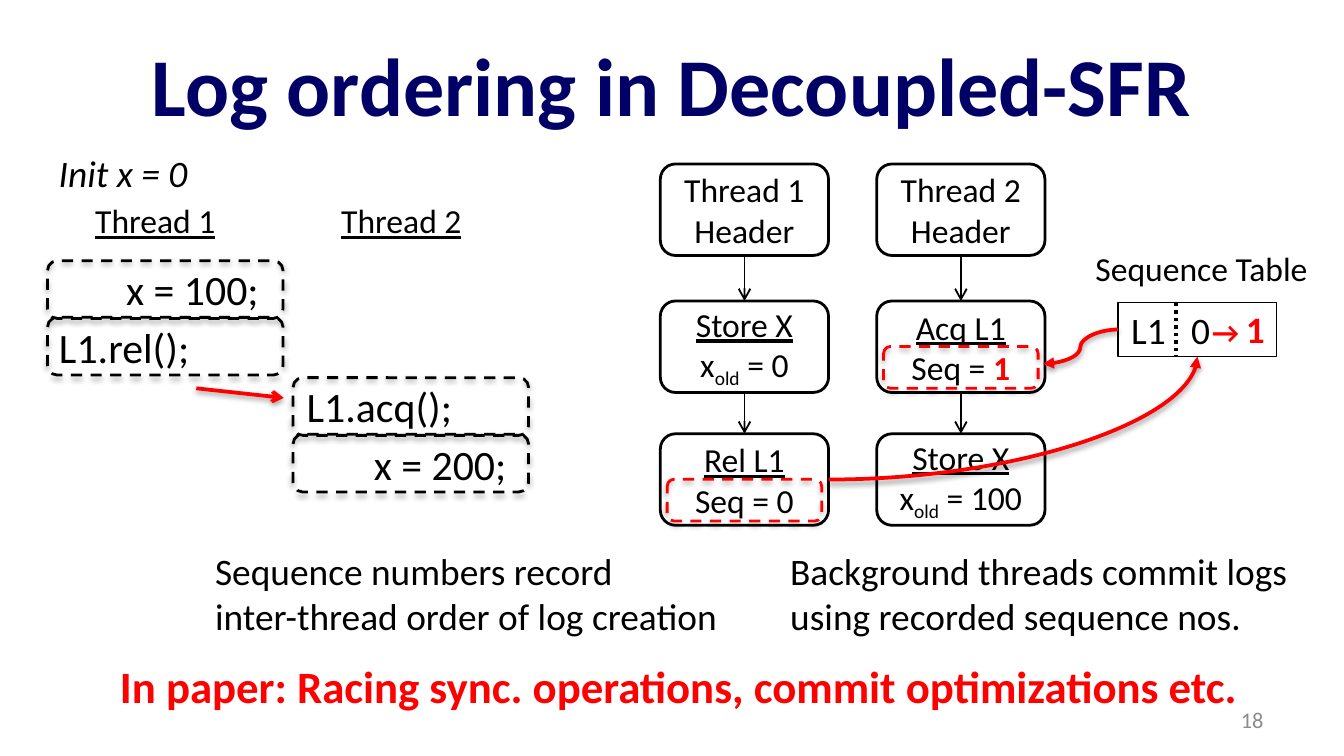
from dataclasses import dataclass

from lxml.etree import SubElement
from pptx import Presentation
from pptx.dml.color import RGBColor
from pptx.enum.dml import MSO_LINE
from pptx.enum.shapes import MSO_CONNECTOR as CONN, MSO_SHAPE as SHAPE
from pptx.enum.text import MSO_ANCHOR as ANCHOR, MSO_AUTO_SIZE as AUTO, PP_ALIGN as ALIGN
from pptx.oxml.ns import qn
from pptx.util import Cm, Pt


@dataclass(frozen=True)
class Theme:
    font: str = "Calibri"
    ink: str = "000000"
    accent: str = "FF0000"
    heading: str = "000066"
    muted: str = "8C8C8C"
    title: float = 44
    banner: float = 24
    code: float = 22.4
    body: float = 20
    label: float = 18
    arrow: float = 16
    small: float = 12


T = Theme()
COLUMNS = (12.48, 16.57)
ROWS = (3.1, 5.69, 8.2)
BOX_W, BOX_H = 3.18, 1.73


def style(r, size, color=T.ink, bold=False, italic=False, underline=False, sub=False):
    f = r.font
    f.name, f.size, f.color.rgb = T.font, Pt(size), RGBColor.from_string(color)
    f.bold, f.italic, f.underline = bold, italic, underline
    if sub:
        r._r.get_or_add_rPr().set("baseline", "-25000")


def write(tf, text, size, align=ALIGN.LEFT, anchor=ANCHOR.TOP, **look):
    tf.text = text
    tf.word_wrap, tf.auto_size, tf.vertical_anchor = True, AUTO.NONE, anchor
    for p in tf.paragraphs:
        p.alignment = align
        for r in p.runs:
            style(r, size, **look)


def add_run(p, text, size, **look):
    r = p.add_run()
    r.text = text
    style(r, size, **look)


def add_tab_stop(p, pos):
    tabs = SubElement(p._p.get_or_add_pPr(), qn("a:tabLst"))
    SubElement(tabs, qn("a:tab"), pos=str(Cm(pos)), algn="l")


def place(sp, x, y, w, h):
    sp.left, sp.top, sp.width, sp.height = Cm(x), Cm(y), Cm(w), Cm(h)


def add_label(s, box, text, size, **look):
    sp = s.shapes.add_textbox(*map(Cm, box))
    write(sp.text_frame, text, size, **look)
    return sp


def fill_body(sp, box, text, size):
    """Use a body placeholder as a list without bullets."""
    place(sp, *box)
    tf = sp.text_frame
    write(tf, text, size)
    for i, p in enumerate(tf.paragraphs):
        pPr = p._p.get_or_add_pPr()
        pPr.set("marL", "0")
        pPr.set("indent", "0")
        SubElement(pPr, qn("a:buNone"))
        add_tab_stop(p, 1.27)
        p.space_before = Pt(size * 0.2 if i else 0)


def add_shadow(effects, opacity, distance):
    shadow = SubElement(effects, qn("a:outerShdw"), blurRad=str(Pt(3.1)),
                        dist=str(Pt(distance)), dir="5400000", rotWithShape="0")
    color = SubElement(shadow, qn("a:srgbClr"), val=T.ink)
    SubElement(color, qn("a:alpha"), val=str(opacity * 1000))


def set_line(line, color, width, dash=None):
    line.color.rgb = RGBColor.from_string(color)
    line.width = Pt(width)
    if dash:
        line.dash_style = dash


def add_box(s, kind, x, y, w, h, width=1.5, color=T.ink, dash=None):
    sp = s.shapes.add_shape(kind, Cm(x), Cm(y), Cm(w), Cm(h))
    sp.shadow.inherit = False
    sp.fill.background()
    set_line(sp.line, color, width, dash)
    return sp


def add_dashed_frame(s, x, y, w, h, color=T.ink):
    sp = add_box(s, SHAPE.ROUNDED_RECTANGLE, x, y, w, h, color=color, dash=MSO_LINE.DASH)
    add_shadow(sp._element.spPr.find(qn("a:effectLst")), 35, 1.8)


def add_flow_box(s, col, row, head, detail, underline=True):
    """Draw a log entry; detail is a list of (text, look) runs for its second line."""
    sp = add_box(s, SHAPE.ROUNDED_RECTANGLE, COLUMNS[col], ROWS[row], BOX_W, BOX_H)
    tf = sp.text_frame
    write(tf, head, T.label, ALIGN.CENTER, ANCHOR.MIDDLE, underline=underline)
    p = tf.add_paragraph()
    p.alignment = ALIGN.CENTER
    for text, look in detail:
        add_run(p, text, T.label, **look)
    return sp


def add_line(s, start, end, color=T.ink, width=1, kind=CONN.STRAIGHT, head=None,
             dash=None, shadow=False):
    c = s.shapes.add_connector(kind, *map(Cm, start + end))
    set_line(c.line, color, width, dash)
    spPr = c._element.spPr
    if head:
        SubElement(spPr.find(qn("a:ln")), qn("a:tailEnd"), type=head)
    effects = SubElement(spPr, qn("a:effectLst"))
    if shadow:
        add_shadow(effects, 38, 1.6)
    return c


def add_program(s, bodies):
    add_label(s, (0.86, 2.72, 3.2, 1.12), "Init x = 0", T.body, italic=True)
    for x, name in ((1.55, "Thread 1"), (6.2, "Thread 2")):
        add_label(s, (x, 3.66, 2.87, 1.02), name, T.label, underline=True)
    fill_body(bodies[0], (0.86, 4.85, 4.5, 3.4), "\tx = 100;\nL1.rel();", T.code)
    fill_body(bodies[1], (5.54, 7.06, 4.55, 3.4), "L1.acq();\n\tx = 200;", T.code)
    for x, y in ((0.9, 4.93), (5.54, 7.14)):
        for i in range(2):
            add_dashed_frame(s, x, y + i * 1.07, 4.45, 1.09)
    add_line(s, (3.71, 7.34), (5.36, 7.52), T.accent, 2, head="arrow", shadow=True)


def add_logs(s):
    """Draw both log columns and return the release entry."""
    def old_x(value):
        return [("x", {}), ("old", {"sub": True}), (f" = {value}", {})]

    header = [("Header", {})]
    acquired = [("Seq = ", {}), ("1", {"color": T.accent, "bold": True})]
    logs = (
        (("Thread 1", header), ("Store X", old_x(0)), ("Rel L1", [("Seq = 0", {})])),
        (("Thread 2", header), ("Acq L1", acquired), ("Store X", old_x(100))),
    )
    columns = [[add_flow_box(s, col, row, *entry, underline=row > 0)
                for row, entry in enumerate(log)] for col, log in enumerate(logs)]
    for boxes in columns:
        for upper, lower in zip(boxes, boxes[1:]):
            c = add_line(s, (0, 0), (1, 1), head="arrow")
            c.begin_connect(upper, 2)
            c.end_connect(lower, 0)
    for col, row in ((0, 2), (1, 1)):
        add_dashed_frame(s, COLUMNS[col] + 0.13, ROWS[row] + 0.86, 2.92, 0.79, T.accent)
    return columns[0][2]


def add_sequence_table(s, release):
    add_label(s, (20.02, 4.57, 5.38, 1.02), "Sequence Table", T.label, align=ALIGN.CENTER)
    table = add_box(s, SHAPE.RECTANGLE, 21.13, 5.72, 3, 1.02, width=0.75)
    write(table.text_frame, "L1\t0", T.body, anchor=ANCHOR.MIDDLE)
    add_tab_stop(table.text_frame.paragraphs[0], 1.13)
    add_line(s, (22.23, 5.72), (22.23, 6.74), width=2, dash=MSO_LINE.ROUND_DOT)
    new = add_label(s, (22.66, 5.66, 1.96, 1.12), "→ ", T.arrow, color=T.accent, bold=True)
    add_run(new.text_frame.paragraphs[0], "1", T.body, color=T.accent, bold=True)

    look = dict(color=T.accent, width=2, kind=CONN.CURVE, head="triangle", shadow=True)
    update = add_line(s, (15.66, 9.07), (22.63, 6.74), **look)
    update._element.spPr.find(qn("a:prstGeom")).set("prst", "curvedConnector2")
    update.begin_connect(release, 3)
    update.end_connect(table, 2)
    lookup = add_line(s, (21.13, 6.23), (19.71, 6.88), **look)
    lookup.begin_connect(table, 1)


def main():
    prs = Presentation()
    prs.slide_width, prs.slide_height = Cm(25.4), Cm(14.29)
    s = prs.slides.add_slide(prs.slide_layouts[4])
    title, *bodies = s.placeholders
    place(title, 1.27, 0.38, 22.86, 2.39)
    write(title.text_frame, "Log ordering in Decoupled-SFR", T.title, ALIGN.CENTER,
          ANCHOR.MIDDLE, color=T.heading, bold=True)

    add_program(s, bodies[:2])
    release = add_logs(s)
    add_sequence_table(s, release)

    fill_body(bodies[2], (3.81, 10.24, 10.03, 1.91),
              "Sequence numbers record\vinter-thread order of log creation", T.body)
    fill_body(bodies[3], (14.68, 10.24, 10.24, 1.91),
              "Background threads commit logs using recorded sequence nos.", T.body)
    add_label(s, (1.04, 12.32, 23.57, 1.27),
              "In paper: Racing sync. operations, commit optimizations etc.",
              T.banner, align=ALIGN.CENTER, color=T.accent, bold=True)
    add_label(s, (18.21, 13.23, 5.92, 0.76), "18", T.small, align=ALIGN.RIGHT,
              anchor=ANCHOR.MIDDLE, color=T.muted)
    prs.save("out.pptx")


if __name__ == "__main__":
    main()
